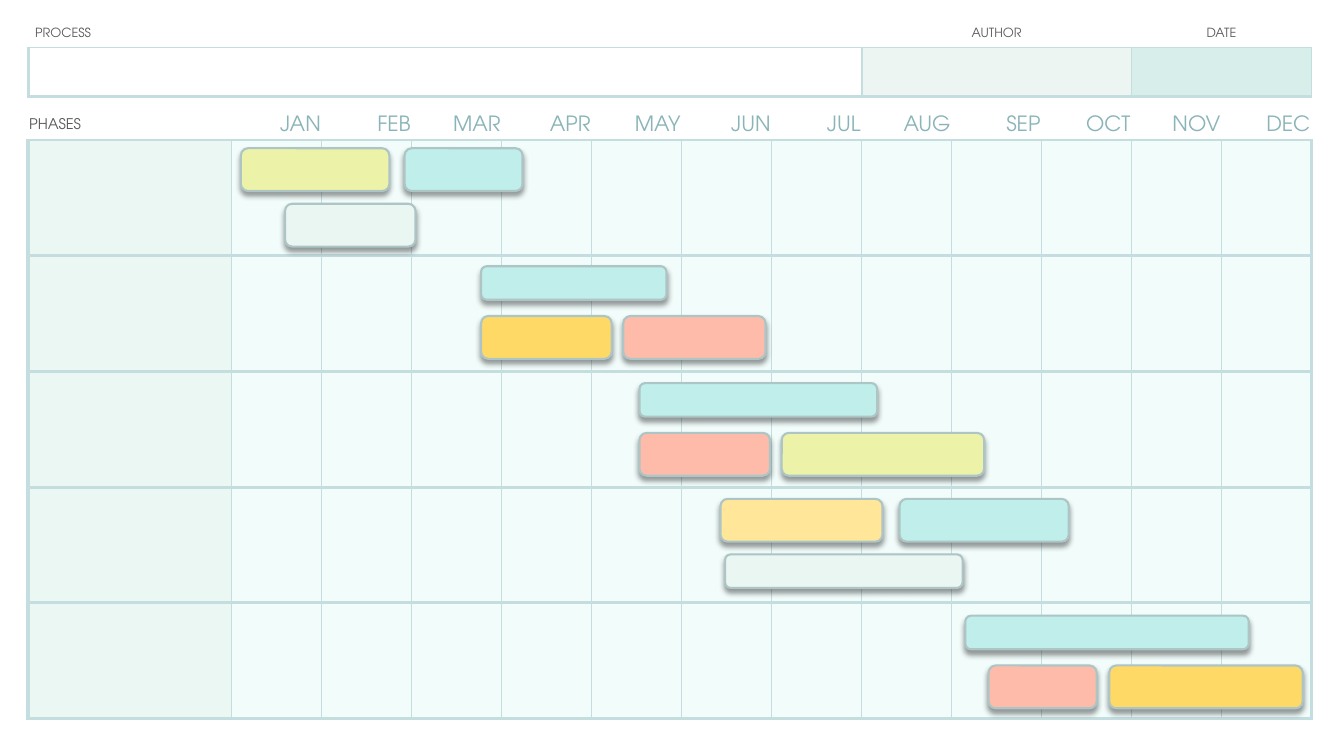
from lxml import etree
from pptx import Presentation
from pptx.dml.color import RGBColor
from pptx.enum.shapes import MSO_SHAPE
from pptx.enum.text import MSO_ANCHOR, PP_ALIGN
from pptx.oxml.ns import qn
from pptx.util import Inches, Pt

ROUNDED = MSO_SHAPE.ROUNDED_RECTANGLE
MIDDLE = MSO_ANCHOR.MIDDLE
LEFT, CENTER, RIGHT = PP_ALIGN.LEFT, PP_ALIGN.CENTER, PP_ALIGN.RIGHT

WHITE = RGBColor(0xFF, 0xFF, 0xFF)
BLACK = RGBColor(0x00, 0x00, 0x00)
GRAY = RGBColor(0x59, 0x59, 0x59)
TEAL = RGBColor(0x8A, 0xB4, 0xB8)
RULE = RGBColor(0xC4, 0xDD, 0xDE)
OUTLINE = RGBColor(0xAE, 0xC5, 0xC6)
AUTHOR_FILL = RGBColor(0xED, 0xF5, 0xF3)
DATE_FILL = RGBColor(0xD7, 0xEE, 0xEB)
PHASE_FILL = RGBColor(0xEA, 0xF7, 0xF2)
MONTH_FILL = RGBColor(0xF2, 0xFD, 0xFB)
LIME = RGBColor(0xED, 0xF2, 0xA9)
MINT = RGBColor(0xE9, 0xF6, 0xF2)
AQUA = RGBColor(0xBF, 0xEE, 0xEB)
GOLD = RGBColor(0xFF, 0xD9, 0x66)
SAND = RGBColor(0xFF, 0xE6, 0x99)
CORAL = RGBColor(0xFF, 0xBB, 0xAA)

FONT = "TeX Gyre Adventor"
MARGIN, WIDTH = 0.28, 12.73
INFO_TOP, CHART_TOP = 0.19, 1.09
PHASE_WIDTH, HEADER_HEIGHT, PHASE_HEIGHT = 2.02, 0.3, 1.148
PHASES = 5
MONTHS = "JAN FEB MAR APR MAY JUN JUL AUG SEP OCT NOV DEC".split()
MONTH_WIDTH = (WIDTH - PHASE_WIDTH) / len(MONTHS)
TALL, SHORT = 0.37, 0.29


def add_grid(top, columns, rows):
    frame = slide.shapes.add_table(
        len(rows), len(columns), Inches(MARGIN), Inches(top),
        Inches(sum(columns)), Inches(sum(rows)))
    grid = frame.table
    grid.first_row = grid.horz_banding = False
    for column, width in zip(grid.columns, columns):
        column.width = Inches(width)
    for row, height in zip(grid.rows, rows):
        row.height = Inches(height)
    return grid


def style_cell(cell, fill, borders, text="", size=9, color=GRAY, align=LEFT, indent=0.01):
    if fill is None:
        cell.fill.background()
    else:
        cell.fill.solid()
        cell.fill.fore_color.rgb = fill
    properties = cell._tc.get_or_add_tcPr()
    for index, (side, (line_color, points)) in enumerate(zip("LRTB", borders)):
        line = etree.Element(qn(f"a:ln{side}"), w=str(Pt(points)))
        solid = etree.SubElement(line, qn("a:solidFill"))
        etree.SubElement(solid, qn("a:srgbClr"), val=str(line_color))
        properties.insert(index, line)
    if text:
        layout = {"vertical_anchor": MIDDLE, "margin_left": Inches(indent),
                  "margin_right": Inches(0.01), "margin_top": Inches(0.01), "margin_bottom": 0}
        for name, value in layout.items():
            setattr(cell, name, value)
        paragraph = cell.text_frame.paragraphs[0]
        paragraph.alignment = align
        run = paragraph.add_run()
        run.text = text
        for name, value in {"size": Pt(size), "name": FONT, "bold": False}.items():
            setattr(run.font, name, value)
        run.font.color.rgb = color


presentation = Presentation()
presentation.slide_width, presentation.slide_height = Inches(13.33), Inches(7.5)
slide = presentation.slides.add_slide(presentation.slide_layouts[6])

thin, thick, clear = (RULE, 1), (RULE, 2.25), (WHITE, 1)

info = add_grid(INFO_TOP, [8.27, 2.67, 1.79], [0.28, 0.49])
info_fields = [
    ("PROCESS", LEFT, 0.07, WHITE, thick),
    ("AUTHOR", CENTER, 0.01, AUTHOR_FILL, thin),
    ("DATE", CENTER, 0.01, DATE_FILL, thin),
]
for column, (label, align, indent, fill, left_rule) in enumerate(info_fields):
    style_cell(info.cell(0, column), None, [clear, clear, clear, thin],
               label, align=align, indent=indent)
    style_cell(info.cell(1, column), fill, [left_rule, thin, thin, thick])

plan = add_grid(CHART_TOP, [PHASE_WIDTH] + [MONTH_WIDTH] * len(MONTHS),
                [HEADER_HEIGHT] + [PHASE_HEIGHT] * PHASES)
header_borders = [clear, clear, clear, thick]
style_cell(plan.cell(0, 0), None, header_borders, "PHASES", 10.5)
for column, month in enumerate(MONTHS, 1):
    style_cell(plan.cell(0, column), None, header_borders, month, 15, TEAL, RIGHT)
for row in range(1, PHASES + 1):
    style_cell(plan.cell(row, 0), PHASE_FILL, [(RULE, 3), thin, thick, thick])
    for column in range(1, len(MONTHS) + 1):
        right_rule = thick if column == len(MONTHS) else thin
        style_cell(plan.cell(row, column), MONTH_FILL, [thin, right_rule, thick, thick])

# phase, drop within the phase row, height in rows, start and length in months
bars = [
    (0, 0.07, TALL, 0.10, 1.65, LIME),
    (0, 0.55, TALL, 0.59, 1.45, MINT),
    (0, 0.07, TALL, 1.92, 1.31, AQUA),
    (1, 0.52, TALL, 2.77, 1.45, GOLD),
    (1, 0.52, TALL, 4.35, 1.58, CORAL),
    (1, 0.09, SHORT, 2.77, 2.06, AQUA),
    (2, 0.53, TALL, 4.53, 1.45, CORAL),
    (2, 0.53, TALL, 6.11, 2.25, LIME),
    (2, 0.10, SHORT, 4.53, 2.64, AQUA),
    (3, 0.10, TALL, 5.43, 1.80, SAND),
    (3, 0.58, SHORT, 5.48, 2.64, MINT),
    (3, 0.10, TALL, 7.42, 1.88, AQUA),
    (4, 0.54, TALL, 9.75, 2.15, GOLD),
    (4, 0.54, TALL, 8.41, 1.20, CORAL),
    (4, 0.11, SHORT, 8.15, 3.15, AQUA),
]
for phase, drop, height, start, length, fill in bars:
    bar = slide.shapes.add_shape(
        ROUNDED,
        Inches(MARGIN + PHASE_WIDTH + start * MONTH_WIDTH),
        Inches(CHART_TOP + HEADER_HEIGHT + (phase + drop) * PHASE_HEIGHT),
        Inches(length * MONTH_WIDTH), Inches(height * PHASE_HEIGHT))
    bar.fill.solid()
    bar.fill.fore_color.rgb = fill
    bar.line.color.rgb = OUTLINE
    bar.line.width = Pt(1.5)
    bar.shadow.inherit = False
    effects = bar._element.spPr.find(qn("a:effectLst"))
    shadow = etree.SubElement(effects, qn("a:outerShdw"), blurRad=str(Pt(4)), dist=str(Pt(3)),
                              dir="5400000", algn="t", rotWithShape="0")
    shade = etree.SubElement(shadow, qn("a:srgbClr"), val=str(BLACK))
    etree.SubElement(shade, qn("a:alpha"), val="40000")

presentation.save("out.pptx")
